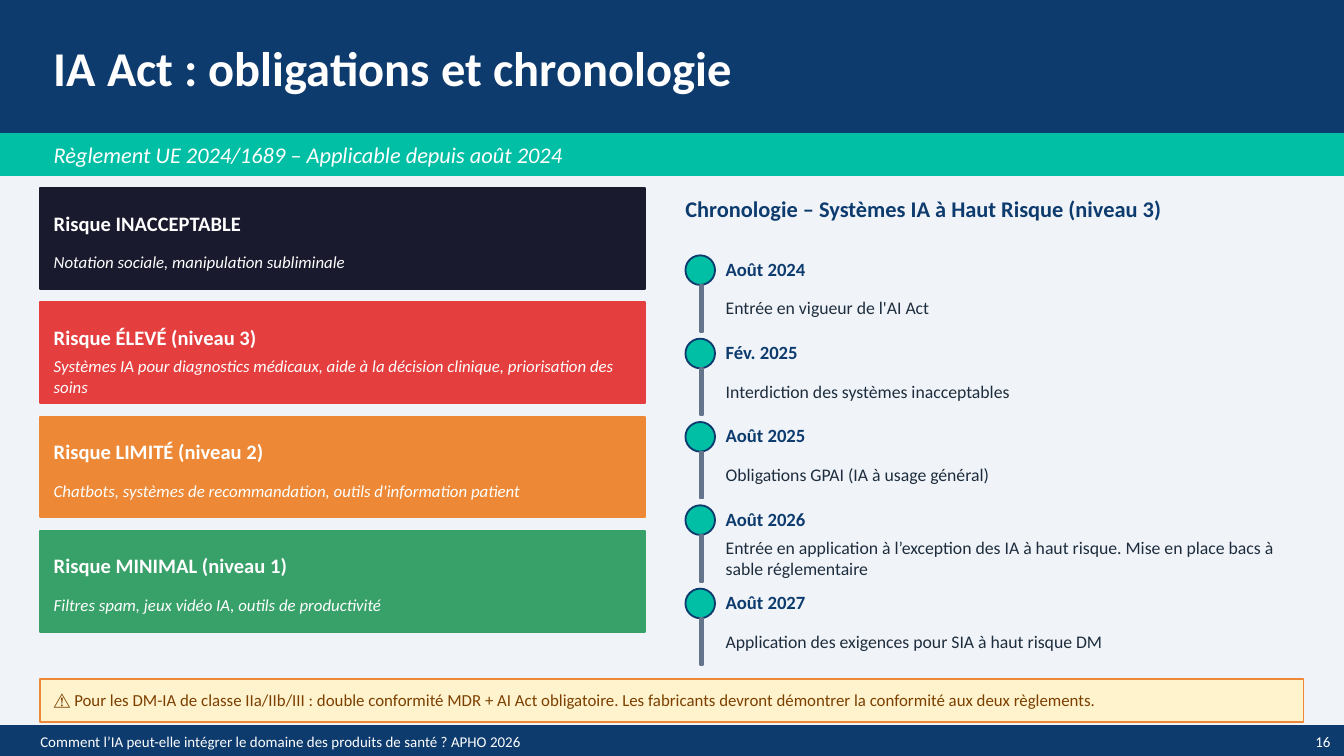
from pptx import Presentation
from pptx.dml.color import RGBColor
from pptx.enum.shapes import MSO_SHAPE
from pptx.enum.text import MSO_ANCHOR, MSO_AUTO_SIZE, PP_ALIGN
from pptx.util import Pt

PX = 9144
RECT, OVAL = MSO_SHAPE.RECTANGLE, MSO_SHAPE.OVAL
MIDDLE, BOTTOM = MSO_ANCHOR.MIDDLE, MSO_ANCHOR.BOTTOM
LEFT, RIGHT = PP_ALIGN.LEFT, PP_ALIGN.RIGHT
NO_FIT = MSO_AUTO_SIZE.NONE
NAVY, TEAL, WHITE = "0D3B6E", "00BFA5", "FFFFFF"
ORANGE, SLATE, INK = "ED8936", "64748B", "1E2D3D"
rgb = RGBColor.from_string

prs = Presentation()
prs.slide_width = 1000 * PX
prs.slide_height = 1125 * PX // 2
s = prs.slides.add_slide(prs.slide_layouts[5])
s.background.fill.solid()
s.background.fill.fore_color.rgb = rgb("F0F4F9")


def box(kind, x, y, w, h, fill, line=None):
    sp = s.shapes.add_shape(kind, x * PX, y * PX, w * PX, h * PX)
    sp.shadow.inherit = False
    sp.fill.solid()
    sp.fill.fore_color.rgb = rgb(fill)
    sp.line.color.rgb = rgb(line or fill)
    sp.line.width = Pt(1)


def write(text, x, y, w, h, size, color, bold=False, italic=False,
          anchor=MIDDLE, align=LEFT, sp=None):
    sp = sp or s.shapes.add_textbox(0, 0, 0, 0)
    sp.left, sp.top, sp.width, sp.height = x * PX, y * PX, w * PX, h * PX
    tf = sp.text_frame
    tf.text = text
    tf.word_wrap = True
    tf.auto_size = NO_FIT
    tf.vertical_anchor = anchor
    tf.margin_left = tf.margin_right = tf.margin_top = tf.margin_bottom = 0
    p = tf.paragraphs[0]
    p.alignment = align
    font = p.runs[0].font
    font.name = "Calibri"
    font.size = Pt(size)
    font.bold = bold
    font.italic = italic
    font.color.rgb = rgb(color)


box(RECT, 0, 0, 1000, 100, NAVY)
title = s.shapes.title
s.shapes._spTree.append(title._element)
write("IA Act : obligations et chronologie", 40, 0, 920, 100, 26, WHITE, bold=True, sp=title)
box(RECT, 0, 100, 1000, 30, TEAL)
write("Règlement UE 2024/1689 – Applicable depuis août 2024",
      40, 100, 920, 30, 12, WHITE, italic=True)

box(RECT, 0, 540, 1000, 23, NAVY)
write("Comment l’IA peut-elle intégrer le domaine des produits de santé ? APHO 2026",
      30, 540, 700, 23, 8, WHITE)
write("16", 930, 540, 60, 23, 8, WHITE, align=RIGHT)

risks = [
    ("Risque INACCEPTABLE", "Notation sociale, manipulation subliminale", "1A1A2E"),
    ("Risque ÉLEVÉ (niveau 3)",
     "Systèmes IA pour diagnostics médicaux, aide à la décision clinique, priorisation des soins",
     "E53E3E"),
    ("Risque LIMITÉ (niveau 2)",
     "Chatbots, systèmes de recommandation, outils d'information patient", ORANGE),
    ("Risque MINIMAL (niveau 1)",
     "Filtres spam, jeux vidéo IA, outils de productivité", "38A169"),
]
for i, (level, examples, color) in enumerate(risks):
    y = 140 + 85 * i
    box(RECT, 30, y, 450, 75, color)
    write(level, 40, y, 430, 35, 11, WHITE, bold=True, anchor=BOTTOM)
    write(examples, 40, y + 35, 430, 40, 9, WHITE, italic=True)

write("Chronologie – Systèmes IA à Haut Risque (niveau 3)",
      510, 135, 470, 40, 12, NAVY, bold=True)
steps = [
    ("Août 2024", "Entrée en vigueur de l'AI Act"),
    ("Fév. 2025", "Interdiction des systèmes inacceptables"),
    ("Août 2025", "Obligations GPAI (IA à usage général)"),
    ("Août 2026", "Entrée en application à l’exception des IA à haut risque. "
                  "Mise en place bacs à sable réglementaire"),
    ("Août 2027", "Application des exigences pour SIA à haut risque DM"),
]
for i, (date, event) in enumerate(steps):
    y = 185 + 62 * i
    box(OVAL, 510, y + 5, 22, 22, TEAL, NAVY)
    box(RECT, 521, y + 27, 2, 35, SLATE)
    write(date, 540, y, 150, 30, 10, NAVY, bold=True)
    write(event, 540, y + 30, 430, 28, 9.5, INK)

box(RECT, 30, 505, 940, 32, "FFF3CD", ORANGE)
write("⚠ Pour les DM-IA de classe IIa/IIb/III : double conformité MDR + AI Act obligatoire. "
      "Les fabricants devront démontrer la conformité aux deux règlements.",
      40, 506, 920, 30, 9, "7B3F00")

prs.save("out.pptx")
